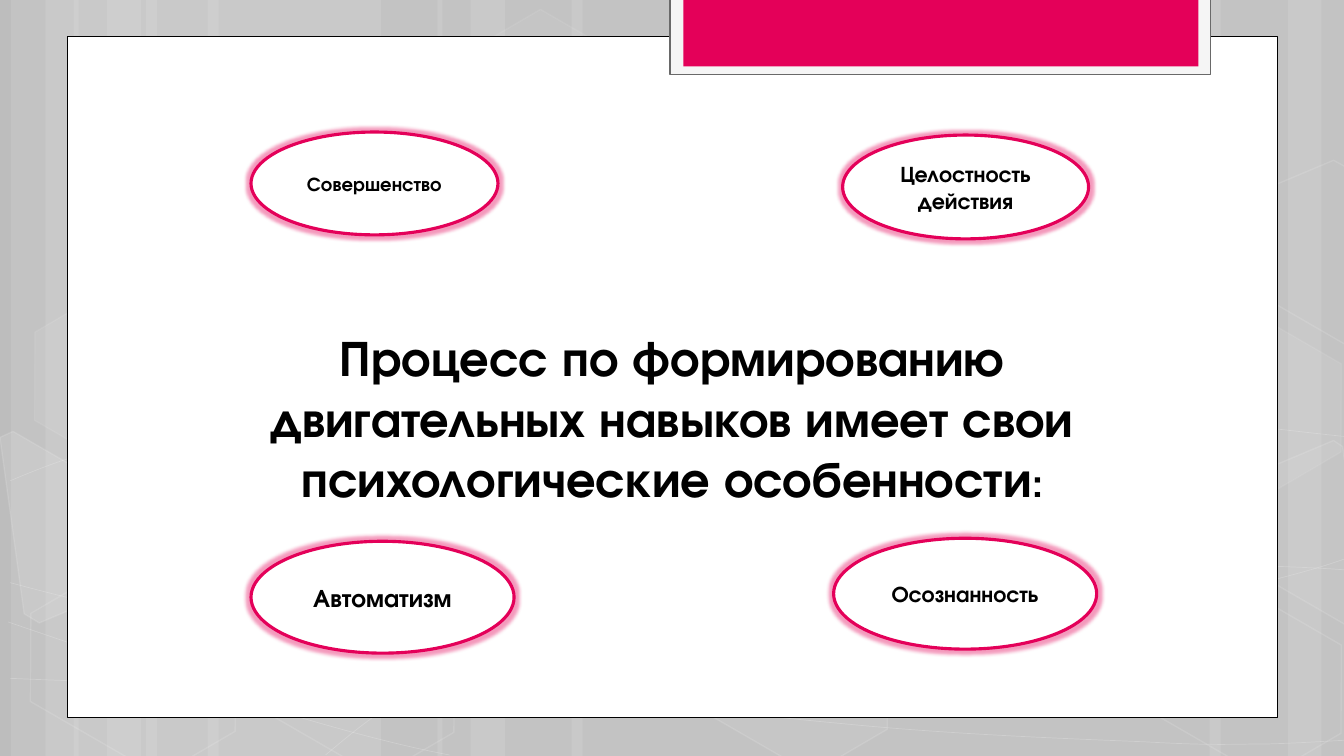
import dataclasses
import typing

import pptx
import pptx.dml.color
import pptx.enum.shapes
import pptx.enum.text
import pptx.oxml
import pptx.oxml.ns
import pptx.util

Inches = pptx.util.Inches
Kind = pptx.enum.shapes.MSO_SHAPE
RGBColor = pptx.dml.color.RGBColor
Point = tuple[float, float]

WHITE = RGBColor(0xFF, 0xFF, 0xFF)
BLACK = RGBColor(0x00, 0x00, 0x00)
GREY = RGBColor(0xBD, 0xBD, 0xBD)
PALE = RGBColor(0xF5, 0xF5, 0xF5)
DARK = RGBColor(0x69, 0x69, 0x69)
PINK = RGBColor(0xE4, 0x00, 0x59)
FONT = "TeX Gyre Adventor"
SLIDE_HEIGHT = 7.5


@dataclasses.dataclass
class Look:
    fill: RGBColor | None = None
    fill_alpha: int = 100
    line: RGBColor | None = None
    line_width: float = 1
    line_alpha: int = 100


@dataclasses.dataclass
class Panel:
    left: float
    top: float
    width: float
    height: float
    look: Look


@dataclasses.dataclass
class Hexagon:
    left: float
    top: float
    fill_alpha: int
    line_alpha: int


@dataclasses.dataclass
class Feature:
    left: float
    top: float
    width: float
    height: float
    label: str
    size: int


# Background: stripes as (left, width), curves as start and Bezier triples
STRIPES = [(1.45, 2.33), (0.11, 0.67), (0.45, 1.11), (2.06, 2.33), (0.73, 0.67), (1.06, 1.11),
           (9.78, 2.33), (12.78, 0.67), (12, 1.11), (5.67, 4.11), (4.34, 0.67), (4.67, 1.11)]
CURVES: list[list[Point]] = [
    [(0.1, 6.73), (0.82, 6.76), (1.54, 6.79), (2.54, 6.78), (3.54, 6.77), (4.77, 6.75), (6.1, 6.65),
     (7.44, 6.55), (9.33, 6.36), (10.55, 6.17), (11.78, 5.98), (13.03, 5.68), (13.43, 5.51)],
    [(0.1, 4.77), (0.48, 4.61), (0.86, 4.46), (1.62, 4.31), (2.38, 4.16), (3.45, 3.94), (4.63, 3.87),
     (5.82, 3.8), (7.25, 3.79), (8.72, 3.87), (10.19, 3.95), (12.63, 4.26), (13.43, 4.34)],
    [(0.08, 6.17), (1.69, 6.72), (3.3, 7.27), (4.46, 7.49)],
    [(0.1, 5.78), (0.51, 5.89), (0.93, 6), (1.71, 6.16), (2.48, 6.31), (3.64, 6.56), (4.75, 6.73),
     (5.86, 6.9), (7.27, 7.08), (8.37, 7.18), (9.48, 7.29), (10.66, 7.33), (11.37, 7.36),
     (12.07, 7.4), (12.25, 7.38), (12.6, 7.38), (12.94, 7.37), (13.19, 7.35), (13.43, 7.34)],
    [(3.23, 7.49), (3.47, 7.29), (3.7, 7.09), (4.03, 6.91), (4.35, 6.73), (4.8, 6.53), (5.17, 6.39),
     (5.54, 6.25), (5.77, 6.19), (6.26, 6.09), (6.75, 5.99), (7.65, 5.85), (8.11, 5.78),
     (8.58, 5.71), (8.65, 5.71), (9.07, 5.69), (9.48, 5.66), (10.13, 5.63), (10.59, 5.62),
     (11.05, 5.61), (11.82, 5.62), (11.82, 5.62), (11.82, 5.62), (12.7, 5.62), (12.7, 5.62),
     (12.95, 5.63), (13.17, 5.64), (13.29, 5.65), (13.41, 5.66), (13.37, 5.65), (13.41, 5.66)],
]
HEXAGONS = [
    Hexagon(4.45, 0.36, 4, 8), Hexagon(6.62, 5.89, 6, 12), Hexagon(0.15, 5.91, 0, 12),
    Hexagon(0.19, 3.12, 7, 8), Hexagon(2.32, 5.92, 0, 12), Hexagon(11.12, 5.93, 0, 12),
    Hexagon(11.12, 3.14, 7, 8),
]
CUT_HEXAGONS: list[tuple[list[Point], int]] = [
    ([(0, 4.34), (0.13, 4.28), (1.15, 4.87), (1.27, 5.81), (0.39, 6.18), (0.24, 6.09)], 10),
    ([(12.35, 4.74), (13.23, 4.37), (13.32, 4.43), (13.57, 6.25), (13.49, 6.28), (12.47, 5.69)], 4),
    ([(12.35, 1.96), (13.23, 1.59), (13.34, 1.65), (13.57, 3.46), (13.49, 3.5), (12.47, 2.91)], 0),
]
PANELS = [
    Panel(0.67, 0.36, 12, 6.76, Look(WHITE, line=BLACK, line_width=0.5)),
    Panel(6.65, -0.02, 5.36, 0.76, Look(PALE, line=DARK, line_width=1.25)),
    Panel(6.78, -0.02, 5.11, 0.68, Look(PINK)),
]
FEATURES = [
    Feature(8.36, 1.34, 2.44, 1.03, "Целостность действия", 16),
    Feature(2.49, 1.31, 2.45, 1.02, "Совершенство", 14),
    Feature(2.49, 5.37, 2.61, 1.11, "Автоматизм", 18),
    Feature(8.27, 5.34, 2.61, 1.1, "Осознанность", 16),
]
TITLE_SPANS = [
    ("Процесс по формированию двигательных навыков имеет свои психологические особенности", 36),
    (":", 28),
]


def set_alpha(colors: list[typing.Any], percent: int) -> None:
    if percent < 100:
        for color in colors:
            color.append(pptx.oxml.parse_xml(
                f'<a:alpha {pptx.oxml.ns.nsdecls("a")} val="{percent * 1000}"/>'))


def apply_look(shape: typing.Any, look: Look) -> None:
    shape.shadow.inherit = False
    for target, color in ((shape.fill, look.fill), (shape.line.fill, look.line)):
        if color is None:
            target.background()
        else:
            target.solid()
            target.fore_color.rgb = color
    if look.line is not None:
        shape.line.width = pptx.util.Pt(look.line_width)
    properties = shape.element.spPr
    set_alpha(properties.xpath("./a:solidFill/a:srgbClr"), look.fill_alpha)
    set_alpha(properties.xpath("./a:ln/a:solidFill/a:srgbClr"), look.line_alpha)


def add_preset(page: typing.Any, kind: Kind, left: float, top: float, width: float,
               height: float, look: Look) -> typing.Any:
    shape = page.shapes.add_shape(kind, Inches(left), Inches(top), Inches(width), Inches(height))
    apply_look(shape, look)
    return shape


def add_outline(page: typing.Any, points: list[Point], closed: bool, look: Look) -> typing.Any:
    corners = [(Inches(x), Inches(y)) for x, y in points]
    builder = page.shapes.build_freeform(*corners[0])
    builder.add_line_segments(corners[1:], close=closed)
    shape = builder.convert_to_shape()
    apply_look(shape, look)
    return shape


def add_curve(page: typing.Any, knots: list[Point], look: Look) -> None:
    shape = add_outline(page, knots, False, look)
    segments = shape.element.spPr.xpath(".//a:lnTo")
    for first in range(0, len(segments), 3):
        bezier = pptx.oxml.parse_xml(f'<a:cubicBezTo {pptx.oxml.ns.nsdecls("a")}/>')
        segments[first].addprevious(bezier)
        for segment in segments[first:first + 3]:
            bezier.append(segment[0])
            segment.getparent().remove(segment)


def hexagon_look(fill_alpha: int, line_alpha: int) -> Look:
    return Look(WHITE if fill_alpha else None, fill_alpha, WHITE, 1, line_alpha)


def write_text(shape: typing.Any, spans: list[tuple[str, int]], anchor: typing.Any) -> None:
    frame = shape.text_frame
    frame_format = {"word_wrap": True, "vertical_anchor": anchor,
                    "auto_size": pptx.enum.text.MSO_AUTO_SIZE.NONE}
    for name, value in frame_format.items():
        setattr(frame, name, value)
    para = frame.paragraphs[0]
    para.alignment = pptx.enum.text.PP_ALIGN.CENTER
    for text, size in spans:
        span = para.add_run()
        span.text = text
        for name, value in {"name": FONT, "size": pptx.util.Pt(size), "bold": True}.items():
            setattr(span.font, name, value)
        span.font.color.rgb = BLACK


def add_feature(page: typing.Any, feature: Feature) -> None:
    oval = add_preset(page, Kind.OVAL, feature.left, feature.top, feature.width, feature.height,
                      Look(WHITE, line=PINK, line_width=2.25))
    glow = pptx.oxml.parse_xml(
        f'<a:glow {pptx.oxml.ns.nsdecls("a")} rad="63500"><a:srgbClr val="{PINK}">'
        '<a:satMod val="175000"/><a:alpha val="40000"/></a:srgbClr></a:glow>')
    oval.element.spPr.xpath("./a:effectLst")[0].append(glow)
    write_text(oval, [(feature.label, feature.size)], pptx.enum.text.MSO_ANCHOR.MIDDLE)


def main() -> None:
    deck = pptx.Presentation()
    deck.slide_width, deck.slide_height = Inches(SLIDE_HEIGHT * 16 / 9), Inches(SLIDE_HEIGHT)
    page = deck.slides.add_slide(deck.slide_layouts[5])
    page.background.fill.solid()
    page.background.fill.fore_color.rgb = GREY

    # Background pattern
    for left, width in STRIPES:
        add_preset(page, Kind.RECTANGLE, left, 0, width, SLIDE_HEIGHT, Look(WHITE, 10))
    for knots in CURVES:
        add_curve(page, knots, Look(None, 100, WHITE, 0.5, 20))
    for item in HEXAGONS:
        shape = add_preset(page, Kind.HEXAGON, item.left, item.top, 2.34, 1.52,
                           hexagon_look(item.fill_alpha, item.line_alpha))
        shape.rotation = 30
        shape.adjustments[0] = 0.285
    for points, fill_alpha in CUT_HEXAGONS:
        add_outline(page, points, True, hexagon_look(fill_alpha, 12))

    # Frame and tab
    for panel in PANELS:
        add_preset(page, Kind.RECTANGLE, panel.left, panel.top, panel.width, panel.height, panel.look)

    # Title, raised above the frame
    title = page.shapes.title
    title.element.getparent().append(title.element)
    for name, value in {"left": 2.26, "top": 2.73, "width": 8.82, "height": 2.36}.items():
        setattr(title, name, Inches(value))
    write_text(title, TITLE_SPANS, pptx.enum.text.MSO_ANCHOR.BOTTOM)

    # Features around the title
    for feature in FEATURES:
        add_feature(page, feature)
    deck.save("out.pptx")


if __name__ == "__main__":
    main()
